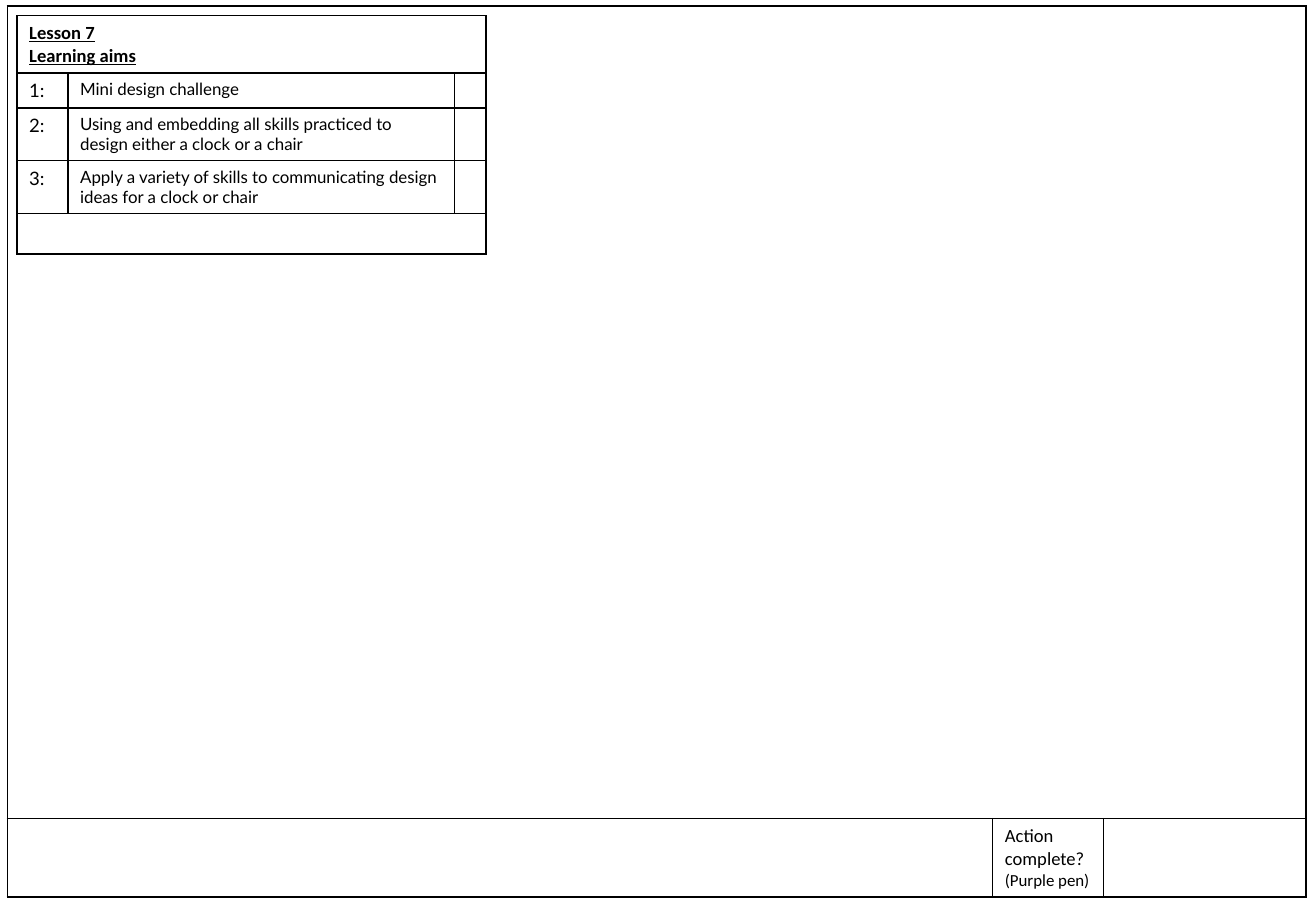
from lxml import etree
from pptx import Presentation
from pptx.dml.color import RGBColor
from pptx.enum import text
from pptx.oxml import ns
from pptx.util import Inches, Pt

BLACK, WHITE = "000000", "FFFFFF"
AIMS = [
    "Mini design challenge",
    "Using and embedding all skills practiced to design either a clock or a chair",
    "Apply a variety of skills to communicating design ideas for a clock or chair",
]


def color(value):
    """Turn a hex string into a colour."""
    return RGBColor.from_string(value)


def add_borders(cell, width=1):
    """Draw a black line on each side of a cell."""
    properties = cell._tc.get_or_add_tcPr()
    for side in ("lnL", "lnR", "lnT", "lnB"):
        line = etree.SubElement(properties, ns.qn(f"a:{side}"), w=str(Pt(width)))
        fill = etree.SubElement(line, ns.qn("a:solidFill"))
        etree.SubElement(fill, ns.qn("a:srgbClr"), val=BLACK)


def add_grid(page, left, top, widths, heights):
    """Add a plain ruled table with small empty cells."""
    frame = page.shapes.add_table(
        len(heights), len(widths), Inches(left), Inches(top),
        Inches(sum(widths)), Inches(sum(heights)))
    table = frame.table
    table.first_row = table.horz_banding = False
    for column, width in zip(table.columns, widths):
        column.width = Inches(width)
    for row, height in zip(table.rows, heights):
        row.height = Inches(height)
    for cell in table.iter_cells():
        add_borders(cell)
        cell.fill.background()
        para = cell.text_frame.paragraphs[0]
        etree.SubElement(para._p, ns.qn("a:endParaRPr"), sz="1000")
    return table


def write(cell, lines, font="Calibri", strong=False):
    """Write (wording, size) lines into a cell, one paragraph each."""
    frame = cell.text_frame
    for index, (wording, size) in enumerate(lines):
        para = frame.add_paragraph() if index else frame.paragraphs[0]
        span = para.add_run()
        span.text = wording
        span.font.name = font
        span.font.size = Pt(size)
        span.font.color.rgb = color(BLACK)
        if strong:
            span.font.bold = span.font.underline = True


def add_page_frame(page):
    """Add the page frame with its action strip."""
    table = add_grid(page, 0.06, 0.05, [8.11, 0.91, 1.67], [6.69, 0.64])
    table.cell(0, 0).merge(table.cell(0, 2))
    action = table.cell(1, 1)
    action.vertical_anchor = text.MSO_ANCHOR.MIDDLE
    write(action, [("Action complete?", 11), ("(Purple pen)", 10)])


def add_lesson_box(page):
    """Add the box that holds the lesson heading."""
    heading = add_grid(page, 0.14, 0.13, [3.86], [1.96]).cell(0, 0)
    heading.fill.solid()
    heading.fill.fore_color.rgb = color(WHITE)
    write(heading, [("Lesson 7", 11), ("Learning aims", 11)], strong=True)


def add_aims(page):
    """Add the numbered learning aims."""
    table = add_grid(page, 0.14, 0.6, [0.42, 3.18, 0.26], [0.29, 0.43, 0.43])
    for index, aim in enumerate(AIMS):
        write(table.cell(index, 0), [(f"{index + 1}:", 11)], "Lato")
        write(table.cell(index, 1), [(aim, 10)], "Lato")


def main():
    """Build the lesson page and save it."""
    deck = Presentation()
    deck.slide_width, deck.slide_height = Inches(10.83), Inches(7.5)
    page = deck.slides.add_slide(deck.slide_layouts.get_by_name("Blank"))
    add_page_frame(page)
    add_lesson_box(page)
    add_aims(page)
    deck.save("out.pptx")


main()
